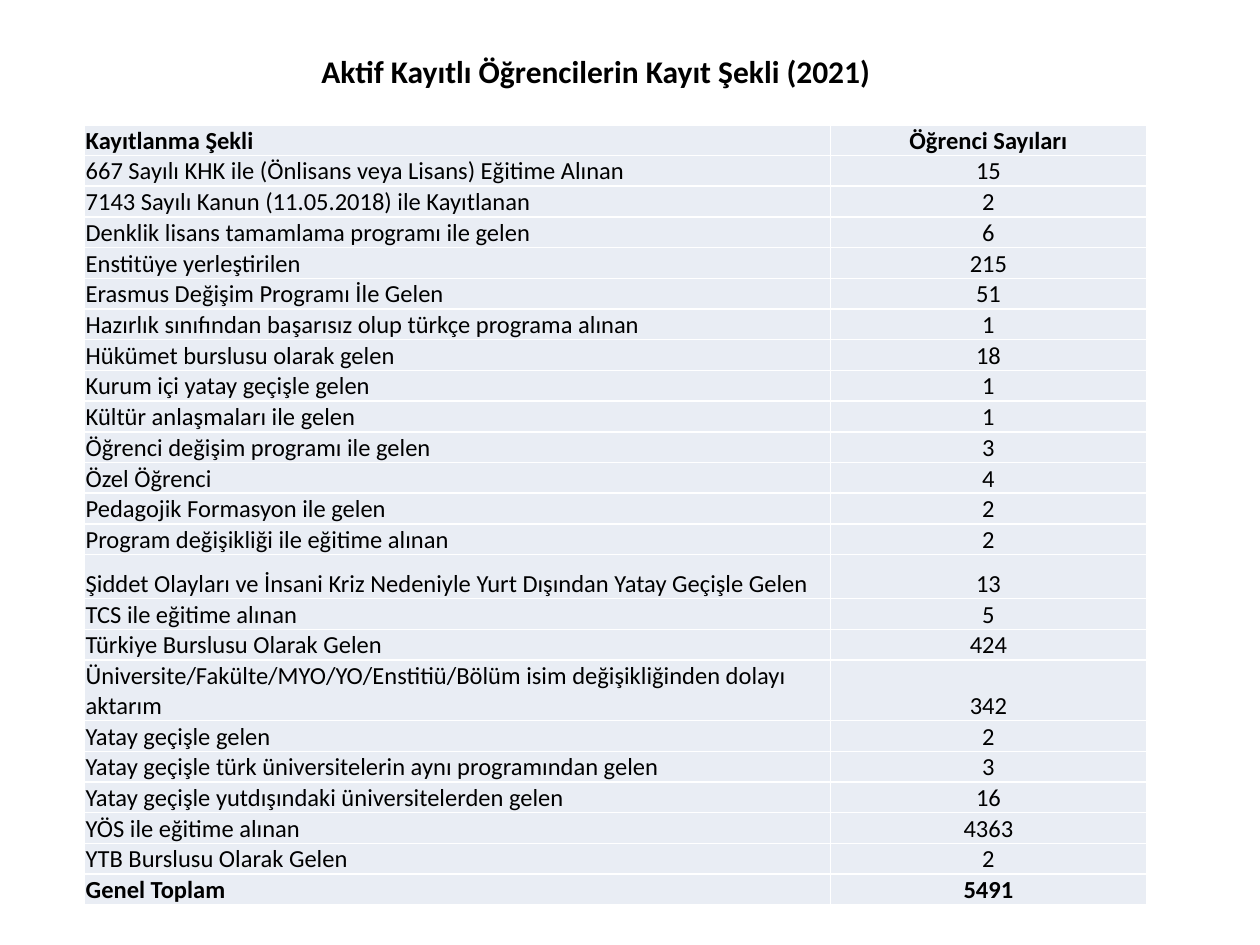
from dataclasses import dataclass

from lxml.etree import SubElement
from pptx import Presentation
from pptx.dml.color import RGBColor
from pptx.enum.text import MSO_ANCHOR, MSO_AUTO_SIZE, PP_ALIGN
from pptx.oxml.ns import qn
from pptx.util import Inches, Pt


@dataclass(frozen=True)
class Theme:
    font: str = "Calibri"
    ink: str = "000000"
    cell_fill: str = "E9EDF4"
    border: str = "FFFFFF"
    border_width: int = Pt(1)
    title_size: int = Pt(18)
    cell_size: int = Pt(14)


THEME = Theme()
TITLE = "Aktif Kayıtlı Öğrencilerin Kayıt Şekli (2021)"
VIOLENCE_ROW = "Şiddet Olayları ve İnsani Kriz Nedeniyle Yurt Dışından Yatay Geçişle Gelen"
RENAMING_ROW = "Üniversite/Fakülte/MYO/YO/Enstitiü/Bölüm isim değişikliğinden dolayı aktarım"
HEADER = ("Kayıtlanma Şekli", "Öğrenci Sayıları")
REGISTRATIONS = [
    ("667 Sayılı KHK ile (Önlisans veya Lisans) Eğitime Alınan", 15),
    ("7143 Sayılı Kanun (11.05.2018) ile Kayıtlanan", 2),
    ("Denklik lisans tamamlama programı ile gelen", 6),
    ("Enstitüye yerleştirilen", 215),
    ("Erasmus Değişim Programı İle Gelen", 51),
    ("Hazırlık sınıfından başarısız olup türkçe programa alınan", 1),
    ("Hükümet burslusu olarak gelen", 18),
    ("Kurum içi yatay geçişle gelen", 1),
    ("Kültür anlaşmaları ile gelen", 1),
    ("Öğrenci değişim programı ile gelen", 3),
    ("Özel Öğrenci", 4),
    ("Pedagojik Formasyon ile gelen", 2),
    ("Program değişikliği ile eğitime alınan", 2),
    (VIOLENCE_ROW, 13),
    ("TCS ile eğitime alınan", 5),
    ("Türkiye Burslusu Olarak Gelen", 424),
    (RENAMING_ROW, 342),
    ("Yatay geçişle gelen", 2),
    ("Yatay geçişle türk üniversitelerin aynı programından gelen", 3),
    ("Yatay geçişle yutdışındaki üniversitelerden gelen", 16),
    ("YÖS ile eğitime alınan", 4363),
    ("YTB Burslusu Olarak Gelen", 2),
]
TOTAL = ("Genel Toplam", 5491)

ROW_HEIGHT = 0.24
TALL_ROWS = {VIOLENCE_ROW: 0.35, RENAMING_ROW: 0.48}
COUNT_WIDTH = Inches(2.51)


def add_run(paragraph, text, size, bold):
    run = paragraph.add_run()
    run.text = text
    run.font.name = THEME.font
    run.font.size = size
    run.font.bold = bold
    run.font.color.rgb = RGBColor.from_string(THEME.ink)


def set_borders(cell):
    properties = cell._tc.get_or_add_tcPr()
    for side in ("a:lnL", "a:lnR", "a:lnT", "a:lnB"):
        line = SubElement(properties, qn(side), w=str(THEME.border_width))
        fill = SubElement(line, qn("a:solidFill"))
        SubElement(fill, qn("a:srgbClr"), val=THEME.border)


def fill_cell(cell, text, align, bold):
    cell.margin_left = cell.margin_right = cell.margin_top = Inches(0.01)
    cell.margin_bottom = 0
    cell.vertical_anchor = MSO_ANCHOR.BOTTOM
    set_borders(cell)
    cell.fill.solid()
    cell.fill.fore_color.rgb = RGBColor.from_string(THEME.cell_fill)
    paragraph = cell.text_frame.paragraphs[0]
    paragraph.alignment = align
    add_run(paragraph, text, THEME.cell_size, bold)


def place_title(slide, left, top, width, height):
    title = slide.shapes.title
    title.left, title.top, title.width, title.height = left, top, width, height
    frame = title.text_frame
    frame.word_wrap = True
    frame.auto_size = MSO_AUTO_SIZE.SHAPE_TO_FIT_TEXT
    frame.vertical_anchor = MSO_ANCHOR.TOP
    paragraph = frame.paragraphs[0]
    paragraph.alignment = PP_ALIGN.CENTER
    add_run(paragraph, TITLE, THEME.title_size, True)


def place_registration_table(slide, left, top, width, height):
    entries = [HEADER, *REGISTRATIONS, TOTAL]
    table = slide.shapes.add_table(len(entries), 2, left, top, width, height).table
    table.first_row = table.horz_banding = False
    table.columns[0].width = width - COUNT_WIDTH
    table.columns[1].width = COUNT_WIDTH

    for row, entry in zip(table.rows, entries):
        label, count = entry
        row.height = Inches(TALL_ROWS.get(label, ROW_HEIGHT))
        bold = entry in (HEADER, TOTAL)
        fill_cell(row.cells[0], label, PP_ALIGN.LEFT, bold)
        fill_cell(row.cells[1], str(count), PP_ALIGN.CENTER, bold)


def main():
    deck = Presentation()
    deck.slide_width, deck.slide_height = Inches(10), Inches(7.5)
    slide = deck.slides.add_slide(deck.slide_layouts[5])  # title only

    # Heading
    place_title(slide, Inches(1.46), Inches(0.36), Inches(6.54), Inches(0.4))
    # Student counts by type of registration
    place_registration_table(slide, Inches(0.67), Inches(0.99), Inches(8.43), Inches(6.17))

    deck.save("out.pptx")


if __name__ == "__main__":
    main()
